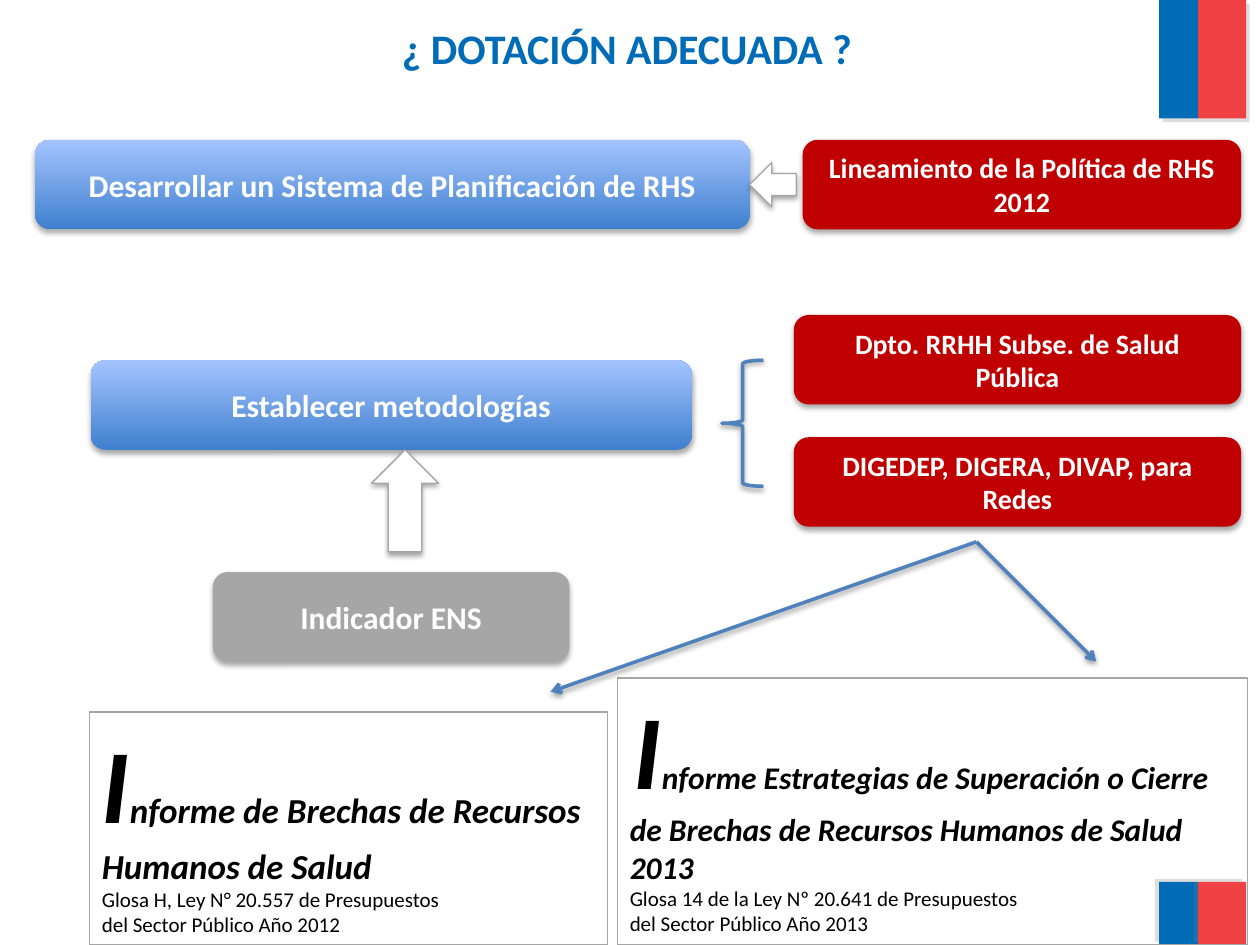
"""Build the slide on adequate health staffing."""
from dataclasses import dataclass

from lxml import etree
from pptx import Presentation
from pptx import util as u
from pptx.dml.color import RGBColor
from pptx.enum import shapes, text
from pptx.oxml.ns import qn

Kind = shapes.MSO_SHAPE


@dataclass(frozen=True)
class Theme:
    font: str = "Calibri"
    blue: str = "006CB7"
    red: str = "EF4144"
    source: str = "C00000"
    neutral: str = "A6A6A6"
    link: str = "4F81BD"
    white: str = "FFFFFF"
    ink: str = "000000"
    goal_bottom: str = "3F80CE"
    goal_top: str = "A4C4FF"
    title_size: float = 24
    goal_size: float = 18
    source_size: float = 16
    initial_size: float = 60
    gap_size: float = 10.5
    note_size: float = 12


@dataclass(frozen=True)
class Shadow:
    color: str
    alpha: int
    blur: float
    distance: float
    angle: int


@dataclass(frozen=True)
class Area:
    left: float
    top: float
    width: float
    height: float

    def lengths(self) -> tuple:
        return tuple(u.Inches(n) for n in (self.left, self.top, self.width, self.height))


@dataclass(frozen=True)
class Box:
    area: Area
    label: str
    size: float
    fill: str | None = None


@dataclass(frozen=True)
class Report:
    area: Area
    lead: str
    heading: str
    heading_size: float
    notes: tuple[str, str]


THEME = Theme()
BOX_SHADOW = Shadow("000000", 35, 3.1, 1.8, 90)
LINK_SHADOW = Shadow("000000", 38, 3.1, 1.6, 90)
BOX_HEIGHT = 0.71

BOXES = (
    Box(Area(0.28, 1.11, 5.67, BOX_HEIGHT), "Desarrollar un Sistema de Planificación de RHS", THEME.goal_size),
    Box(Area(0.72, 2.86, 4.77, BOX_HEIGHT), "Establecer metodologías", THEME.goal_size),
    Box(Area(6.37, 1.11, 3.48, BOX_HEIGHT), "Lineamiento de la Política de RHS 2012",
        THEME.source_size, THEME.source),
    Box(Area(6.3, 3.47, 3.55, BOX_HEIGHT), "DIGEDEP, DIGERA, DIVAP, para Redes",
        THEME.source_size, THEME.source),
    Box(Area(6.3, 2.5, 3.55, BOX_HEIGHT), "Dpto. RRHH Subse. de Salud Pública",
        THEME.source_size, THEME.source),
    Box(Area(1.69, 4.54, 2.83, BOX_HEIGHT), "Indicador ENS", THEME.goal_size, THEME.neutral),
)
REPORTS = (
    Report(Area(0.71, 5.65, 4.11, 1.85), "", "nforme de Brechas de Recursos Humanos de Salud", 20,
           ("Glosa H, Ley N° 20.557 de Presupuestos", "del Sector Público Año 2012")),
    Report(Area(4.9, 5.38, 5, 2.12), " ",
           "nforme Estrategias de Superación o Cierre de Brechas de Recursos Humanos de Salud 2013", 18,
           ("Glosa 14 de la Ley Nº 20.641 de Presupuestos", "del Sector Público Año 2013")),
)


def rgb(color: str) -> RGBColor:
    """Turn a hex colour into an RGBColor."""
    return RGBColor.from_string(color)


def set_font(font, size: float, color: str, bold: bool = False, italic: bool = False) -> None:
    """Style a paragraph or run font."""
    font.name, font.size, font.bold, font.italic = THEME.font, u.Pt(size), bold, italic
    font.color.rgb = rgb(color)


def cast_shadow(part, shadow: Shadow) -> None:
    """Give a shape or connector an outer shadow."""
    effects = etree.SubElement(part._element.spPr, qn("a:effectLst"))
    outer = etree.SubElement(effects, qn("a:outerShdw"), blurRad=str(u.Pt(shadow.blur)),
                             dist=str(u.Pt(shadow.distance)), dir=str(shadow.angle * 60000),
                             rotWithShape="0")
    color = etree.SubElement(outer, qn("a:srgbClr"), val=shadow.color)
    etree.SubElement(color, qn("a:alpha"), val=str(shadow.alpha * 1000))


def add_part(slide, kind: Kind, area: Area, fill: str | None = None, line: str | None = None,
             weight: float = 0.75, shadow: Shadow | None = None):
    """Add a preset shape with its fill, outline and shadow."""
    part = slide.shapes.add_shape(kind, *area.lengths())
    if fill:
        part.fill.solid()
        part.fill.fore_color.rgb = rgb(fill)
    else:
        part.fill.background()
    if line:
        part.line.color.rgb = rgb(line)
        part.line.width = u.Pt(weight)
    else:
        part.line.fill.background()
    if shadow:
        cast_shadow(part, shadow)
    else:
        part.shadow.inherit = False
    return part


def add_flag(slide, top: float, height: float, angle: int) -> None:
    """Add a blue and red band pair."""
    shadow = Shadow("808080", 25, 0, 3, angle)
    for left, width, color in ((9.2, 0.31, THEME.blue), (9.51, 0.38, THEME.red)):
        add_part(slide, Kind.RECTANGLE, Area(left, top, width, height), color, shadow=shadow)


def add_title(slide, wording: str) -> None:
    """Add the centred slide title."""
    title = slide.shapes.add_textbox(*Area(0.05, 0.13, 9.85, 0.5).lengths())
    title.text_frame.word_wrap = True
    title.text_frame.auto_size = text.MSO_AUTO_SIZE.SHAPE_TO_FIT_TEXT
    paragraph = title.text_frame.paragraphs[0]
    paragraph.text = wording
    paragraph.alignment = text.PP_ALIGN.CENTER
    set_font(paragraph.font, THEME.title_size, THEME.blue, bold=True)


def add_box(slide, box: Box) -> None:
    """Add a rounded box, with a gradient where no fill is given."""
    part = add_part(slide, Kind.ROUNDED_RECTANGLE, box.area, box.fill, shadow=BOX_SHADOW)
    if box.fill is None:
        part.fill.gradient()
        part.fill.gradient_angle = 90
        for stop, color in zip(part.fill.gradient_stops, (THEME.goal_bottom, THEME.goal_top)):
            stop.color.rgb = rgb(color)
    part.text_frame.vertical_anchor = text.MSO_ANCHOR.MIDDLE
    paragraph = part.text_frame.paragraphs[0]
    paragraph.text = box.label
    paragraph.alignment = text.PP_ALIGN.CENTER
    set_font(paragraph.font, box.size, THEME.white, bold=True)


def add_report(slide, report: Report) -> None:
    """Add an outlined report with a large initial and two notes."""
    frame = add_part(slide, Kind.RECTANGLE, report.area, line=THEME.neutral).text_frame
    frame.word_wrap = True
    frame.auto_size = text.MSO_AUTO_SIZE.SHAPE_TO_FIT_TEXT
    frame.vertical_anchor = text.MSO_ANCHOR.TOP
    heading = frame.paragraphs[0]
    heading.alignment = text.PP_ALIGN.LEFT
    for wording, size, strong in ((report.lead, THEME.gap_size, False), ("I", THEME.initial_size, True),
                                  (report.heading, report.heading_size, True)):
        if wording:
            run = heading.add_run()
            run.text = wording
            set_font(run.font, size, THEME.ink, bold=strong, italic=strong)
    for wording in report.notes:
        note = frame.add_paragraph()
        note.text = wording
        note.alignment = text.PP_ALIGN.LEFT
        set_font(note.font, THEME.note_size, THEME.ink)


def add_link(slide, start: tuple[float, float], end: tuple[float, float]) -> None:
    """Add an arrow from start to end."""
    link = slide.shapes.add_connector(shapes.MSO_CONNECTOR.STRAIGHT, *map(u.Inches, start + end))
    link.line.color.rgb = rgb(THEME.link)
    link.line.width = u.Pt(2)
    etree.SubElement(link.line._get_or_add_ln(), qn("a:tailEnd"), type="arrow")
    cast_shadow(link, LINK_SHADOW)


def main() -> None:
    """Build and save the slide."""
    deck = Presentation()
    deck.slide_width, deck.slide_height = u.Inches(10), u.Inches(7.5)
    slide = deck.slides.add_slide(deck.slide_layouts[6])
    add_flag(slide, 0, 0.94, 45)
    add_flag(slide, 7, 0.5, 215)
    add_title(slide, "¿ DOTACIÓN ADECUADA ?")
    for box in BOXES:
        add_box(slide, box)
    for kind, area in ((Kind.LEFT_ARROW, Area(5.95, 1.29, 0.37, 0.35)),
                       (Kind.UP_ARROW, Area(2.95, 3.57, 0.53, 0.81))):
        add_part(slide, kind, area, THEME.white, THEME.neutral, shadow=BOX_SHADOW)
    add_part(slide, Kind.LEFT_BRACE, Area(5.73, 2.86, 0.33, 1), line=THEME.link, weight=2, shadow=LINK_SHADOW)
    for report in REPORTS:
        add_report(slide, report)
    for end in ((8.7, 5.25), (4.37, 5.49)):
        add_link(slide, (7.75, 4.3), end)
    deck.save("out.pptx")


if __name__ == "__main__":
    main()
